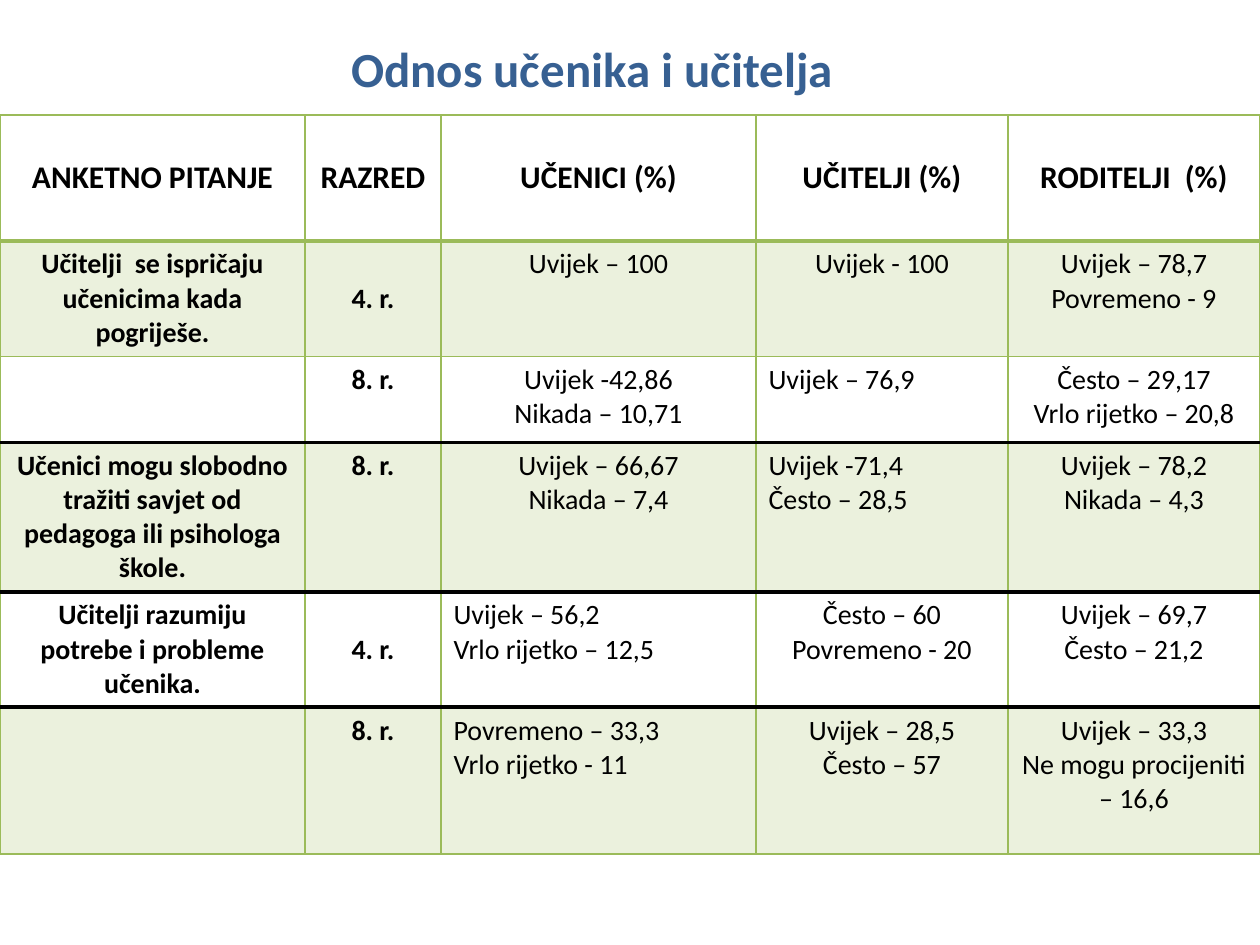
from dataclasses import dataclass

import pptx
import pptx.dml.color
import pptx.enum.text
import pptx.oxml
import pptx.oxml.ns
import pptx.util

PX = 914400 / 126
FONT = "Calibri"
GREEN, BLACK, BLUE = "9BBB59", "000000", "376092"
LEFT = pptx.enum.text.PP_ALIGN.LEFT
CENTER = pptx.enum.text.PP_ALIGN.CENTER
TOP = pptx.enum.text.MSO_ANCHOR.TOP
MIDDLE = pptx.enum.text.MSO_ANCHOR.MIDDLE


@dataclass
class Entry:
    text: str
    align: int = CENTER
    anchor: int = TOP


@dataclass
class Row:
    height: int
    entries: list[Entry]
    bottom: tuple[str, float] = (GREEN, 1)


COLUMNS = [305, 136, 315, 252, 252]
HEADINGS = ["ANKETNO PITANJE", "RAZRED", "UČENICI (%)", "UČITELJI (%)", "RODITELJI  (%)"]
THICK = (BLACK, 2.25)
ROWS = [
    Row(126, [Entry(h, anchor=MIDDLE) for h in HEADINGS], (GREEN, 2)),
    Row(114, [Entry("Učitelji  se ispričaju učenicima kada pogriješe."),
              Entry("4. r.", anchor=MIDDLE), Entry("Uvijek – 100"),
              Entry("Uvijek - 100"), Entry("Uvijek – 78,7\nPovremeno - 9")]),
    Row(86, [Entry(""), Entry("8. r."), Entry("Uvijek -42,86\nNikada – 10,71"),
             Entry("Uvijek – 76,9", LEFT),
             Entry("Često – 29,17\nVrlo rijetko – 20,8")], THICK),
    Row(147, [Entry("Učenici mogu slobodno tražiti savjet od pedagoga ili psihologa škole."),
              Entry("8. r."), Entry("Uvijek – 66,67\nNikada – 7,4"),
              Entry("Uvijek -71,4\nČesto – 28,5", LEFT),
              Entry("Uvijek – 78,2\nNikada – 4,3")], THICK),
    Row(114, [Entry("Učitelji razumiju potrebe i probleme učenika."),
              Entry("4. r.", anchor=MIDDLE),
              Entry("Uvijek – 56,2\nVrlo rijetko – 12,5", LEFT),
              Entry("Često – 60\nPovremeno - 20"),
              Entry("Uvijek – 69,7\nČesto – 21,2")], THICK),
    Row(147, [Entry(""), Entry("8. r."),
              Entry("Povremeno – 33,3\nVrlo rijetko - 11", LEFT),
              Entry("Uvijek – 28,5\nČesto – 57"),
              Entry("Uvijek – 33,3\nNe mogu procijeniti – 16,6")]),
]


def px(n: int) -> int:
    return pptx.util.Emu(round(n * PX))


def rgb(color: str):
    return pptx.dml.color.RGBColor.from_string(color)


def write(tf, text: str, align: int, size: int, color: str, bold: bool) -> None:
    for i, line in enumerate(text.split("\n")):
        p = tf.paragraphs[0] if i == 0 else tf.add_paragraph()
        p.alignment = align
        if not line:
            continue
        r = p.add_run()
        r.text = line
        r.font.name = FONT
        r.font.size = pptx.util.Pt(size)
        r.font.bold = bold
        r.font.color.rgb = rgb(color)


def add_border(cell, side: str, color: str, width: float) -> None:
    cell._tc.get_or_add_tcPr().append(pptx.oxml.parse_xml(
        f'<a:ln{side} {pptx.oxml.ns.nsdecls("a")} w="{pptx.util.Pt(width)}">'
        f'<a:solidFill><a:srgbClr val="{color}"/></a:solidFill></a:ln{side}>'))


def fill_cell(cell, tinted: bool) -> None:
    if not tinted:
        cell.fill.background()
        return
    cell.fill.solid()
    cell.fill.fore_color.rgb = rgb(GREEN)
    clr = cell._tc.tcPr.find(pptx.oxml.ns.qn("a:solidFill"))[0]
    clr.append(pptx.oxml.parse_xml(
        f'<a:alpha {pptx.oxml.ns.nsdecls("a")} val="20000"/>'))


def add_survey(s) -> None:
    height = sum(row.height for row in ROWS)
    table = s.shapes.add_table(len(ROWS), len(COLUMNS), 0, px(115),
                               px(sum(COLUMNS)), px(height)).table
    table.first_row = table.horz_banding = False
    for column, width in zip(table.columns, COLUMNS):
        column.width = px(width)
    top = (GREEN, 1)
    for i, row in enumerate(ROWS):
        table.rows[i].height = px(row.height)
        for j, entry in enumerate(row.entries):
            cell = table.cell(i, j)
            cell.vertical_anchor = entry.anchor
            write(cell.text_frame, entry.text, entry.align,
                  18 if i == 0 else 16, BLACK, i == 0 or j < 2)
            sides = {"L": (GREEN, 1), "R": (GREEN, 1), "T": top, "B": row.bottom}
            for side, (color, width) in sides.items():
                add_border(cell, side, color, width)
            fill_cell(cell, i % 2 == 1)
        top = row.bottom


def add_title(s) -> None:
    tf = s.shapes.add_textbox(px(336), px(32), px(512), px(72)).text_frame
    tf.word_wrap = False
    write(tf, "Odnos učenika i učitelja", CENTER, 28, BLUE, True)


def main() -> None:
    prs = pptx.Presentation()
    prs.slide_width, prs.slide_height = px(1260), px(945)
    s = prs.slides.add_slide(prs.slide_layouts[6])
    # Survey results by question and class
    add_survey(s)
    # Heading above the table
    add_title(s)
    prs.save("out.pptx")


if __name__ == "__main__":
    main()
